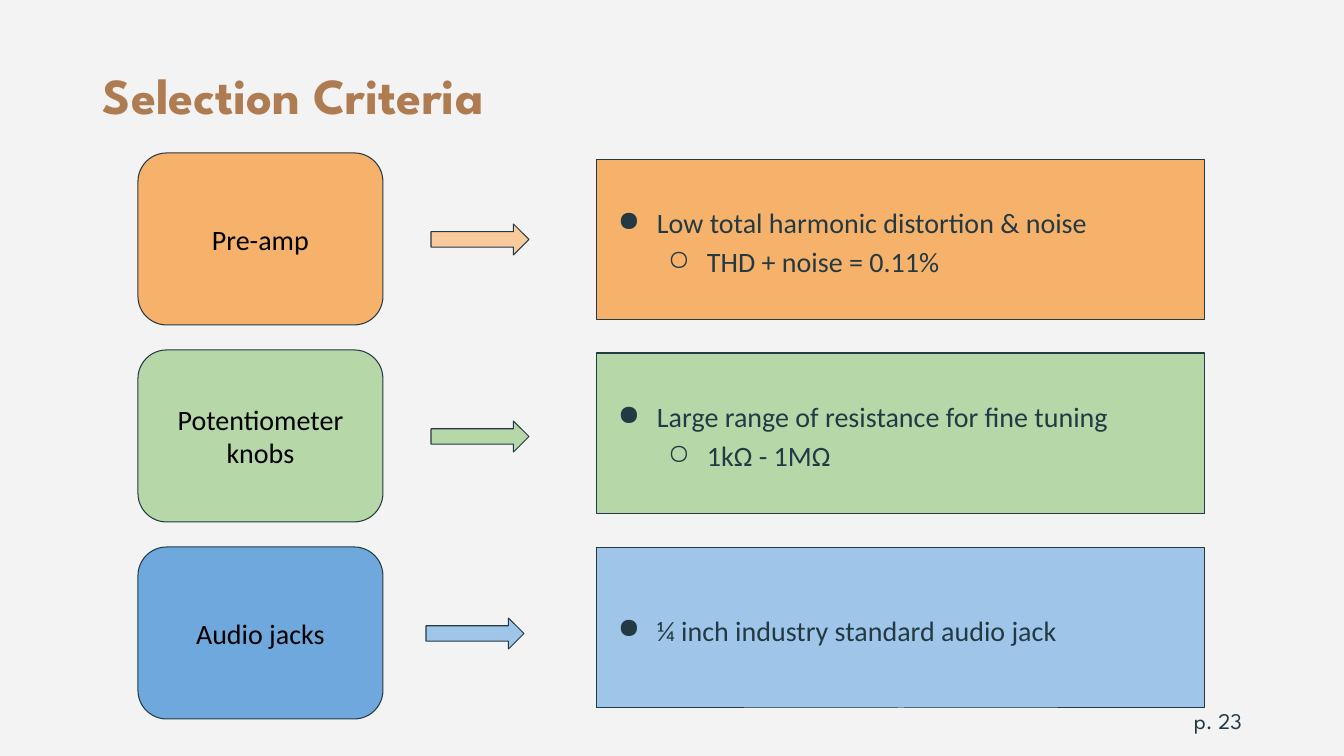
from lxml.etree import SubElement
from pptx import Presentation
from pptx.dml.color import RGBColor
from pptx.enum.shapes import MSO_SHAPE
from pptx.enum.text import MSO_ANCHOR, PP_ALIGN
from pptx.oxml.ns import qn
from pptx.util import Pt

EMU_PER_PX = 914400 / 100.8
COLORS = {
    "background": "F3F3F3",
    "title": "AF7B51",
    "ink": "233A44",
    "black": "000000",
    "orange": "F6B26B",
    "light orange": "F9CB9C",
    "green": "B6D7A8",
    "blue": "6FA8DC",
    "light blue": "9FC5E8",
}
BULLETS = "●○"
COMPONENT_PITCH = 197
CRITERIA_PITCH = 194
COMPONENTS = [
    ("Pre-amp", "orange", "light orange", "orange", 431,
     ["Low total harmonic distortion & noise", "THD + noise = 0.11%"]),
    ("Potentiometer knobs", "green", "green", "green", 431,
     ["Large range of resistance for fine tuning", "1kΩ - 1MΩ"]),
    ("Audio jacks", "blue", "light blue", "light blue", 426,
     ["¼ inch industry standard audio jack"]),
]


def px(length):
    return round(length * EMU_PER_PX)


def color(name):
    return RGBColor.from_string(COLORS[name])


def prepare_frame(holder, vertical_inset):
    frame = holder.text_frame
    frame.word_wrap = True
    frame.vertical_anchor = MSO_ANCHOR.MIDDLE
    frame.margin_left = frame.margin_right = px(10)
    frame.margin_top = frame.margin_bottom = px(vertical_inset)
    return frame


def style_font(paragraph, typeface, size, ink, bold=False):
    font = paragraph.font
    font.name = typeface
    font.size = Pt(size)
    font.bold = bold
    font.color.rgb = color(ink)


def add_label(slide, box, text, size, ink, align, bold=False, line_spacing=1.0):
    label = slide.shapes.add_textbox(*map(px, box))
    paragraph = prepare_frame(label, 5).paragraphs[0]
    paragraph.text = text
    paragraph.alignment = align
    paragraph.line_spacing = line_spacing
    style_font(paragraph, "League Spartan", size, ink, bold)


def add_outlined(slide, preset, box, fill):
    outlined = slide.shapes.add_shape(preset, *map(px, box))
    outlined.shadow.inherit = False
    outlined.fill.solid()
    outlined.fill.fore_color.rgb = color(fill)
    outlined.line.color.rgb = color("ink")
    outlined.line.width = Pt(0.75)
    return outlined


def add_component(slide, box, name, fill):
    component = add_outlined(slide, MSO_SHAPE.ROUNDED_RECTANGLE, box, fill)
    paragraph = prepare_frame(component, 10).paragraphs[0]
    paragraph.text = name
    paragraph.alignment = PP_ALIGN.CENTER
    style_font(paragraph, "Calibri", 20, "black")


def set_bullet(paragraph, level):
    paragraph.level = level
    properties = paragraph._p.get_or_add_pPr()
    properties.set("marL", str(px(50 * (level + 1))))
    properties.set("indent", str(px(-39)))
    bullet_color = SubElement(properties, qn("a:buClr"))
    SubElement(bullet_color, qn("a:srgbClr"), val=COLORS["ink"])
    SubElement(properties, qn("a:buChar"), char=BULLETS[level])


def add_criteria(slide, box, criteria, fill):
    panel = add_outlined(slide, MSO_SHAPE.RECTANGLE, box, fill)
    frame = prepare_frame(panel, 10)
    for level, criterion in enumerate(criteria):
        paragraph = frame.add_paragraph() if level else frame.paragraphs[0]
        paragraph.text = criterion
        paragraph.alignment = PP_ALIGN.LEFT
        paragraph.line_spacing = 1.15
        set_bullet(paragraph, level)
        style_font(paragraph, "Calibri", 20, "ink")


def main():
    deck = Presentation()
    deck.slide_width, deck.slide_height = px(1344), px(756)
    slide = deck.slides.add_slide(deck.slide_layouts[6])
    slide.background.fill.solid()
    slide.background.fill.fore_color.rgb = color("background")

    add_label(slide, (93, 25, 1159, 146), "Selection Criteria", 36, "title",
              PP_ALIGN.LEFT, bold=True, line_spacing=0.9)
    add_label(slide, (950, 701, 302, 40), "p. 23", 16, "ink", PP_ALIGN.RIGHT)

    for row, (name, fill, arrow_fill, panel_fill, arrow_left, criteria) in enumerate(COMPONENTS):
        component_shift = row * COMPONENT_PITCH
        add_component(slide, (138, 153 + component_shift, 245, 172), name, fill)
        add_outlined(slide, MSO_SHAPE.RIGHT_ARROW,
                     (arrow_left, 224 + component_shift, 98, 31), arrow_fill)
        add_criteria(slide, (597, 159 + row * CRITERIA_PITCH, 608, 161), criteria, panel_fill)

    deck.save("out.pptx")


if __name__ == "__main__":
    main()
